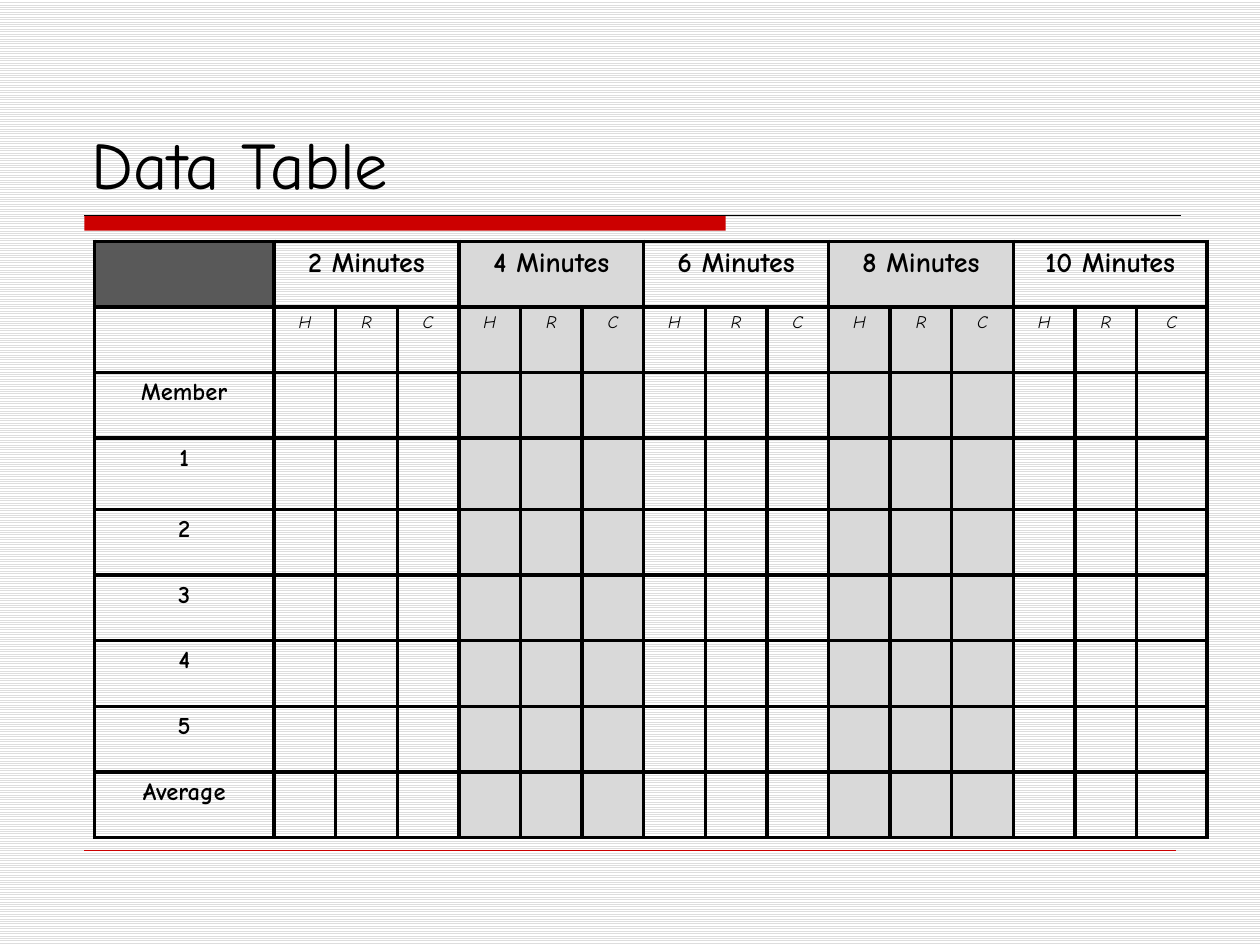
from lxml import etree
from pptx import Presentation
from pptx import util as u
from pptx.dml.color import RGBColor
from pptx.enum import dml, shapes, text
from pptx.oxml.ns import qn

COLORS = {"ink": "000000", "red": "CC0000", "dark": "595959",
          "band": "D9D9D9", "stripe": "DDDDDD", "paper": "FFFFFF"}
FORMATS = {
    "title": {"size": u.Pt(38), "bold": False},
    "time": {"size": u.Pt(16), "bold": True},
    "measure": {"size": u.Pt(10), "italic": True},
    "member": {"size": u.Pt(14), "bold": True},
}
TIMES = ["2 Minutes", "4 Minutes", "6 Minutes", "8 Minutes", "10 Minutes"]
MEASURES = ["H", "R", "C"]
MEMBERS = ["Member", "1", "2", "3", "4", "5", "Average"]


def rgb(name):
    return RGBColor.from_string(COLORS[name])


class SlideBuilder:
    font = "Comic Neue"
    grid_columns, grid_rows = 100, 75

    def __init__(self, deck):
        self.deck = deck
        self.slide = deck.slides.add_slide(deck.slide_layouts[5])

    def place(self, left, top, width, height):
        across = self.deck.slide_width / self.grid_columns
        down = self.deck.slide_height / self.grid_rows
        return [round(left * across), round(top * down),
                round(width * across), round(height * down)]

    def background(self):
        fill = self.slide.background.fill
        fill.patterned()
        fill.pattern = dml.MSO_PATTERN.LIGHT_HORIZONTAL
        fill.fore_color.rgb = rgb("stripe")
        fill.back_color.rgb = rgb("paper")

    def add_words(self, frame, words, style):
        para = frame.paragraphs[0]
        span = para.add_run()
        span.text = words
        span.font.name = self.font
        span.font.color.rgb = rgb("ink")
        for key, value in FORMATS[style].items():
            setattr(span.font, key, value)
        return para

    def title(self, words, *area):
        box = self.slide.shapes.title
        box.left, box.top, box.width, box.height = self.place(*area)
        box.text_frame.vertical_anchor = text.MSO_ANCHOR.BOTTOM
        para = self.add_words(box.text_frame, words, "title")
        para.alignment = text.PP_ALIGN.LEFT

    def bar(self, color, *area):
        box = self.slide.shapes.add_shape(shapes.MSO_SHAPE.RECTANGLE, *self.place(*area))
        box.shadow.inherit = False
        box.fill.solid()
        box.fill.fore_color.rgb = rgb(color)
        box.line.fill.background()

    def rule(self, color, weight, left, top, width):
        x, y, length, _ = self.place(left, top, width, 0)
        line = self.slide.shapes.add_connector(
            shapes.MSO_CONNECTOR.STRAIGHT, x, y, x + length, y)
        line.line.color.rgb = rgb(color)
        line.line.width = u.Pt(weight)
        etree.SubElement(line._element.spPr, qn("a:effectLst"))

    def table(self, left, top, widths, heights):
        area = self.place(left, top, sum(widths), sum(heights))
        table = self.slide.shapes.add_table(len(heights), len(widths), *area).table
        table.first_row = table.horz_banding = False
        for column, width in zip(table.columns, widths):
            column.width = self.place(0, 0, width, 0)[2]
        for row, height in zip(table.rows, heights):
            row.height = self.place(0, 0, 0, height)[3]
        return table

    def cell(self, cell, color=None):
        if color:
            cell.fill.solid()
            cell.fill.fore_color.rgb = rgb(color)
        else:
            cell.fill.background()
        properties = cell._tc.get_or_add_tcPr()
        for index, side in enumerate(["a:lnL", "a:lnR", "a:lnT", "a:lnB"]):
            border = etree.Element(qn(side), w=str(int(u.Pt(2.25))))
            solid = etree.SubElement(border, qn("a:solidFill"))
            etree.SubElement(solid, qn("a:srgbClr"), val=COLORS["ink"])
            properties.insert(index, border)

    def label(self, cell, words, style):
        para = self.add_words(cell.text_frame, words, style)
        para.alignment = text.PP_ALIGN.CENTER


def fill_table(builder, table):
    group = len(MEASURES)
    for r in range(len(table.rows)):
        for c in range(len(table.columns)):
            shaded = c > 0 and (c - 1) // group % 2 == 1
            color = "dark" if r == c == 0 else "band" if shaded else None
            builder.cell(table.cell(r, c), color)
    for index, time in enumerate(TIMES):
        first = 1 + index * group
        table.cell(0, first).merge(table.cell(0, first + group - 1))
        builder.label(table.cell(0, first), time, "time")
        for offset, measure in enumerate(MEASURES):
            builder.label(table.cell(1, first + offset), measure, "measure")
    for r, member in enumerate(MEMBERS, 2):
        builder.label(table.cell(r, 0), member, "member")


def main():
    deck = Presentation()
    deck.slide_width, deck.slide_height = u.Inches(10), u.Inches(7.5)
    builder = SlideBuilder(deck)
    builder.background()
    builder.bar("red", 6.7, 17.1, 50.9, 1.2)
    builder.rule("ink", 0.75, 6.7, 17.1, 87)
    builder.rule("red", 0.25, 6.7, 67.5, 86.6)
    builder.title("Data Table", 6.3, 3.3, 87.5, 13.3)
    widths = [14.25] + [4.89] * 14 + [5.6]
    heights = [5.21] * 3 + [5.65] + [5.21] * 5
    fill_table(builder, builder.table(7.5, 19.15, widths, heights))
    deck.save("out.pptx")


if __name__ == "__main__":
    main()
